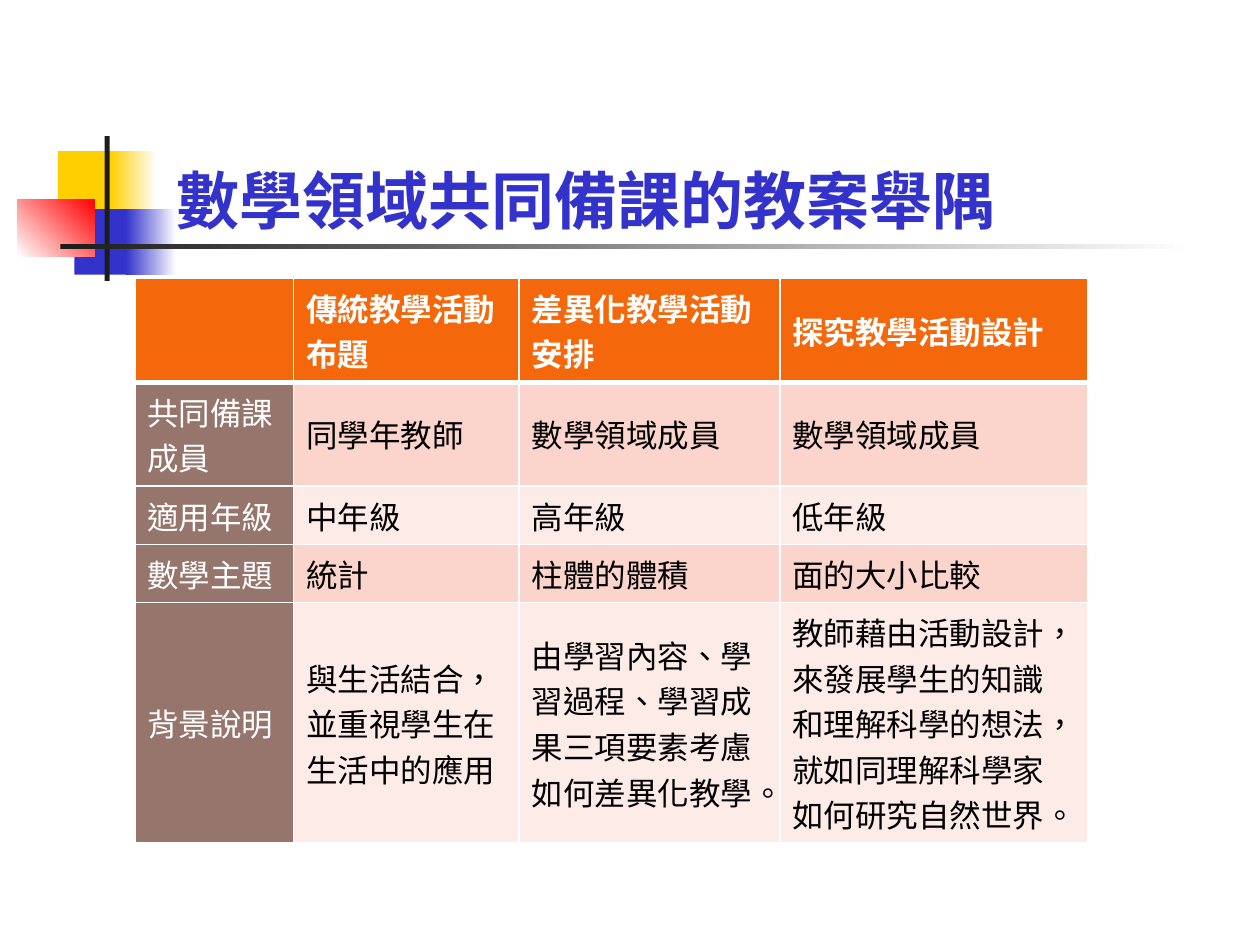
from lxml.etree import SubElement
from pptx import Presentation
from pptx.dml.color import RGBColor
from pptx.enum.lang import MSO_LANGUAGE_ID
from pptx.enum.shapes import MSO_SHAPE
from pptx.enum.text import MSO_ANCHOR, MSO_AUTO_SIZE, PP_ALIGN
from pptx.oxml.ns import qn
from pptx.util import Pt

EMU_PER_PX = 9144
WHITE, BLACK = "FFFFFF", "000000"
YELLOW, BLUE, RED, INK = "FFCF01", "3333CC", "FF0000", "1C1C1C"
ORANGE, BROWN, PINK, PALE_PINK = "F4680B", "96756C", "FBD4CC", "FDEBE7"

DECORATIONS = [
    ((46, 120, 48, 52), [YELLOW], 0),
    ((88, 120, 36, 52), [YELLOW, WHITE], 0),
    ((59, 166, 46, 52), [BLUE], 0),
    ((100, 166, 40, 52), [BLUE, WHITE], 0),
    ((14, 158, 61, 46), [WHITE, RED], 45),
    ((83, 108, 4, 115), [INK], 0),
    ((48, 194, 900, 4), [INK, WHITE], 0),
]
COLUMN_WIDTHS = [126, 179, 207, 244]
ROW_HEIGHTS = [82, 82, 46, 46, 190]
LESSON_ROWS = [
    ["", "傳統教學活動布題", "差異化教學活動安排", "探究教學活動設計"],
    ["共同備課\n成員", "同學年教師", "數學領域成員", "數學領域成員"],
    ["適用年級", "中年級", "高年級", "低年級"],
    ["數學主題", "統計", "柱體的體積", "面的大小比較"],
    [
        "背景說明",
        "與生活結合，並重視學生在生活中的應用",
        "由學習內容、學習過程、學習成果三項要素考慮如何差異化教學。",
        "教師藉由活動設計，來發展學生的知識和理解科學的想法，就如同理解科學家如何研究自然世界。",
    ],
]


def px(length):
    """Turn whole pixels, 100 to the inch, into EMU."""
    return length * EMU_PER_PX


def colour(value):
    """Turn a hex string into a colour."""
    return RGBColor.from_string(value)


def set_values(target, values):
    """Set every attribute in a dict of format values."""
    for name, value in values.items():
        setattr(target, name, value)


def format_text(text_frame, size, font_name, text_colour, bold):
    """Format all runs of a text frame."""
    for paragraph in text_frame.paragraphs:
        paragraph.alignment = PP_ALIGN.LEFT
        for run in paragraph.runs:
            set_values(run.font, {
                "size": Pt(size),
                "name": font_name,
                "bold": bold,
                "language_id": MSO_LANGUAGE_ID.TRADITIONAL_CHINESE,
            })
            run.font.color.rgb = colour(text_colour)


def add_decoration(slide, box, colours, angle):
    """Add a plain or two-colour gradient rectangle."""
    shape = slide.shapes.add_shape(MSO_SHAPE.RECTANGLE, *map(px, box))
    shape.shadow.inherit = False
    shape.line.fill.background()
    if len(colours) == 1:
        shape.fill.solid()
        shape.fill.fore_color.rgb = colour(colours[0])
        return
    shape.fill.gradient()
    shape.fill.gradient_angle = angle
    for stop, value in zip(shape.fill.gradient_stops, colours):
        stop.color.rgb = colour(value)


def set_title(slide, text):
    """Place and format the title placeholder."""
    title = slide.shapes.title
    set_values(title, {
        "left": px(130), "top": px(68), "width": px(848), "height": px(125),
    })
    set_values(title.text_frame, {
        "text": text,
        "word_wrap": True,
        "auto_size": MSO_AUTO_SIZE.NONE,
        "vertical_anchor": MSO_ANCHOR.BOTTOM,
    })
    format_text(title.text_frame, 36, "Karla", BLUE, True)


def set_borders(cell, widths):
    """Draw white cell borders with a width in points for each side."""
    properties = cell._tc.get_or_add_tcPr()
    for index, (side, width) in enumerate(widths.items()):
        line = properties.makeelement(qn(f"a:ln{side}"), {"w": str(Pt(width))})
        fill = SubElement(line, qn("a:solidFill"))
        SubElement(fill, qn("a:srgbClr")).set("val", WHITE)
        properties.insert(index, line)


def cell_style(row, column):
    """Return the fill, text colour, font and weight of a cell."""
    if row == 0:
        return ORANGE, WHITE, "Karla", True
    if column == 0:
        return BROWN, WHITE, "Cabin", False
    font_name = "Karla" if row == len(LESSON_ROWS) - 1 and column > 1 else "Cabin"
    return PINK if row % 2 else PALE_PINK, BLACK, font_name, False


def add_lesson_table(slide):
    """Add the table that compares the three lesson plans."""
    table = slide.shapes.add_table(
        len(LESSON_ROWS), len(COLUMN_WIDTHS),
        px(107), px(221), px(sum(COLUMN_WIDTHS)), px(sum(ROW_HEIGHTS)),
    ).table
    for column, width in zip(table.columns, COLUMN_WIDTHS):
        column.width = px(width)
    for row_index, texts in enumerate(LESSON_ROWS):
        table.rows[row_index].height = px(ROW_HEIGHTS[row_index])
        for column_index, text in enumerate(texts):
            cell = table.cell(row_index, column_index)
            fill, text_colour, font_name, bold = cell_style(row_index, column_index)
            set_values(cell, {"text": text, "vertical_anchor": MSO_ANCHOR.MIDDLE})
            cell.fill.solid()
            cell.fill.fore_color.rgb = colour(fill)
            format_text(cell.text_frame, 18, font_name, text_colour, bold)
            set_borders(cell, {
                "L": 1, "R": 1,
                "T": 3 if row_index == 1 else 1,
                "B": 3 if row_index == 0 else 1,
            })


def main():
    """Build and save the slide."""
    presentation = Presentation()
    set_values(presentation, {"slide_width": px(1000), "slide_height": px(750)})
    slide = presentation.slides.add_slide(presentation.slide_layouts[5])
    for box, colours, angle in DECORATIONS:
        add_decoration(slide, box, colours, angle)
    set_title(slide, "數學領域共同備課的教案舉隅")
    add_lesson_table(slide)
    presentation.save("out.pptx")


if __name__ == "__main__":
    main()
